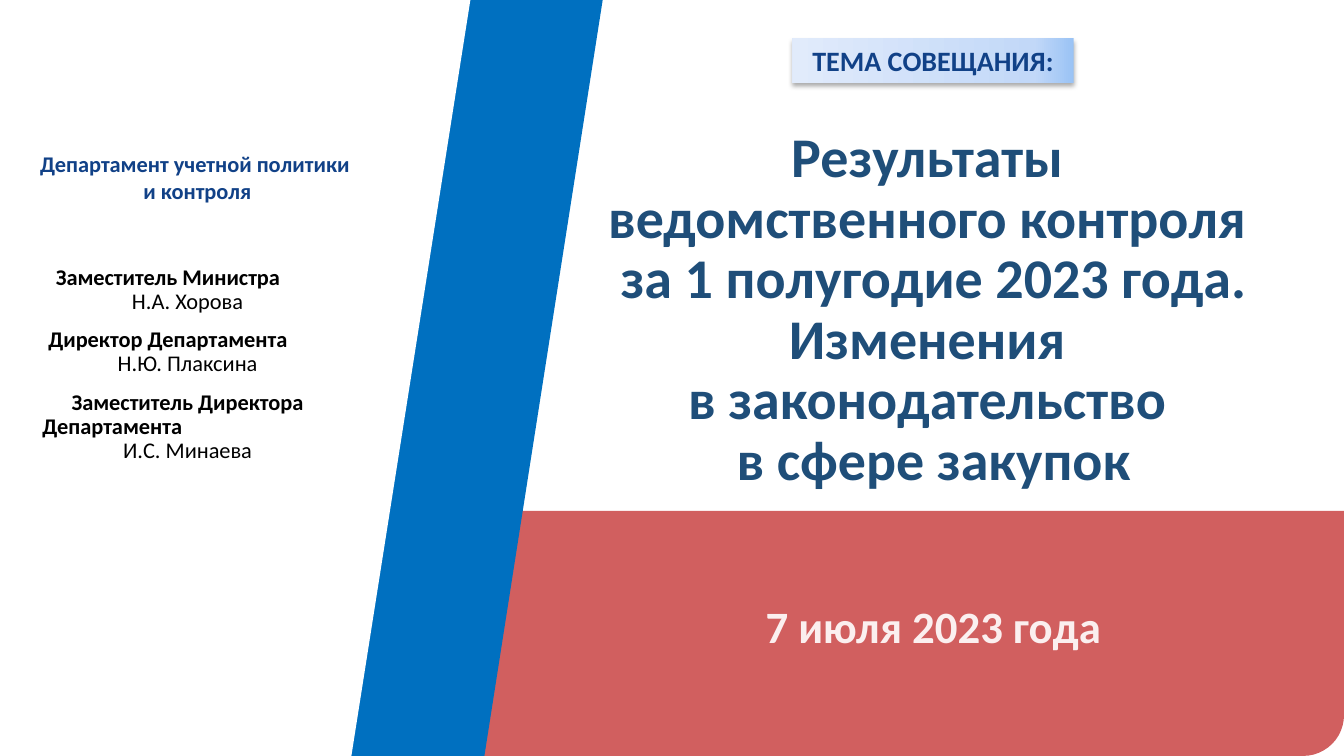
from lxml import etree
from pptx import Presentation
from pptx.dml.color import RGBColor
from pptx.enum import shapes as kinds, text as txt
from pptx.oxml import ns
from pptx.util import Pt

WHITE = RGBColor(0xFF, 0xFF, 0xFF)
BLACK = RGBColor(0, 0, 0)
RED = RGBColor(0xD1, 0x5F, 0x5F)
BLUE = RGBColor(0x00, 0x70, 0xC0)
TITLE_BLUE = RGBColor(0x1F, 0x4E, 0x79)
NAVY = RGBColor(0x11, 0x41, 0x87)
PALE_PINK = RGBColor(0xFB, 0xEF, 0xEF)
LABEL_STOPS = [(0, RGBColor(0x9A, 0xC3, 0xF5)),
               (14, RGBColor(0xC2, 0xD8, 0xF8)),
               (100, RGBColor(0xE1, 0xEB, 0xFB))]

WIDTH, HEIGHT = 960, 540
FONT = "Calibri"
TITLE = ("Результаты \vведомственного контроля \vза 1 полугодие 2023 года.\v"
         "Изменения \vв законодательство \vв сфере закупок")
CENTER, LEFT = txt.PP_ALIGN.CENTER, txt.PP_ALIGN.LEFT
# text, bold, alignment, left margin, right margin, space before
PEOPLE = [
    ("Заместитель Министра", True, CENTER, 0, 28, 10),
    ("Н.А. Хорова", False, CENTER, 0, 0, 0),
    ("Директор Департамента", True, CENTER, 0, 28, 10),
    ("Н.Ю. Плаксина", False, CENTER, 0, 0, 0),
    ("Заместитель Директора", True, CENTER, 0, 0, 10),
    ("Департамента", True, LEFT, 3, 0, 0),
    ("И.С. Минаева", False, CENTER, 0, 0, 0),
]


def style(para, size, color, bold=True, align=CENTER):
    para.alignment = align
    for span in para.runs:
        span.font.name = FONT
        span.font.size = Pt(size)
        span.font.bold = bold
        span.font.color.rgb = color


def paint(shape, color):
    shape.shadow.inherit = False
    shape.fill.solid()
    shape.fill.fore_color.rgb = color
    shape.line.fill.background()


def add_preset(page, kind, box):
    return page.shapes.add_shape(kind, *map(Pt, box))


def place(page, holder, box):
    """Moves a placeholder to the box and to the front."""
    holder.left, holder.top, holder.width, holder.height = map(Pt, box)
    page.shapes._spTree.append(holder._element)
    frame = holder.text_frame
    frame.word_wrap = True
    frame.auto_size = txt.MSO_AUTO_SIZE.NONE
    frame.vertical_anchor = txt.MSO_ANCHOR.TOP
    return frame


def add_caption(page, box, caption, size, color):
    frame = page.shapes.add_textbox(*map(Pt, box)).text_frame
    frame.word_wrap = False
    frame.text = caption
    for para in frame.paragraphs:
        style(para, size, color)


def add_date_band(page, box):
    left, top, width, height = box
    paint(add_preset(page, kinds.MSO_SHAPE.ROUND_2_DIAG_RECTANGLE, box), RED)
    add_caption(page, (left + 538.5, top + 59, 256.5, 85),
                "7 июля 2023 года", 32, PALE_PINK)


def add_title(page, box):
    frame = place(page, page.shapes.title, box)
    frame.margin_top = Pt(4.5)
    para = frame.paragraphs[0]
    para.text = TITLE
    para.line_spacing = 0.9
    style(para, 40, TITLE_BLUE)


def add_left_panel(page, box):
    """White slanted panel with the blue stripe along its edge."""
    left, top, width, height = box
    stripe = (left + 8, top, 422.5, height)
    paint(add_preset(page, kinds.MSO_SHAPE.FLOWCHART_DATA, stripe), BLUE)
    outline = page.shapes.build_freeform(left, top, scale=Pt(1))
    outline.add_line_segments([(left + width, top),
                               (left + width - 84.5, top + height),
                               (left, top + height)])
    paint(outline.convert_to_shape(), WHITE)
    add_caption(page, (left + 20, top + 103.5, 242, 46),
                "Департамент учетной политики \nи контроля", 16, NAVY)
    add_people(page, (left + 20, top + 186.5, 228, 269))


def add_people(page, box):
    frame = place(page, page.placeholders[1], box)
    frame.text = "\n".join(person[0] for person in PEOPLE)
    for para, person in zip(frame.paragraphs, PEOPLE):
        _, bold, align, margin_left, margin_right, before = person
        style(para, 16, BLACK, bold, align)
        para.line_spacing = 0.9
        para.space_before = Pt(before)
        props = para._p.get_or_add_pPr()
        props.set("marL", str(Pt(margin_left)))
        props.set("marR", str(Pt(margin_right)))
        props.set("indent", "0")
        etree.SubElement(props, ns.qn("a:buNone"))


def add_color(parent, color):
    return etree.SubElement(parent, ns.qn("a:srgbClr"), val=str(color))


def add_topic_label(page, box):
    label = add_preset(page, kinds.MSO_SHAPE.RECTANGLE, box)
    label.line.fill.background()
    label.fill.gradient()
    label.fill.gradient_angle = 180
    stops = label._element.spPr.find(".//" + ns.qn("a:gsLst"))
    for stop in list(stops):
        stops.remove(stop)
    for percent, color in LABEL_STOPS:
        add_color(etree.SubElement(stops, ns.qn("a:gs"),
                                   pos=str(percent * 1000)), color)
    label.shadow.inherit = False
    effects = label._element.spPr.find(ns.qn("a:effectLst"))
    shadow = etree.SubElement(effects, ns.qn("a:outerShdw"),
                              blurRad=str(Pt(3.5)), dist=str(Pt(2.2)),
                              dir="5400000", rotWithShape="0")
    etree.SubElement(add_color(shadow, BLACK), ns.qn("a:alpha"), val="32000")
    frame = label.text_frame
    frame.word_wrap = True
    frame.text = "ТЕМА СОВЕЩАНИЯ:"
    style(frame.paragraphs[0], 20, NAVY)


def main():
    deck = Presentation()
    deck.slide_width, deck.slide_height = Pt(WIDTH), Pt(HEIGHT)
    page = deck.slides.add_slide(deck.slide_layouts[1])
    add_date_band(page, (0, 365, WIDTH, 175))
    add_title(page, (420.5, 88, 492.5, 227.5))
    add_left_panel(page, (0, 0, 335.5, HEIGHT))
    add_topic_label(page, (566, 27.5, 201, 31.5))
    deck.save("out.pptx")


if __name__ == "__main__":
    main()
